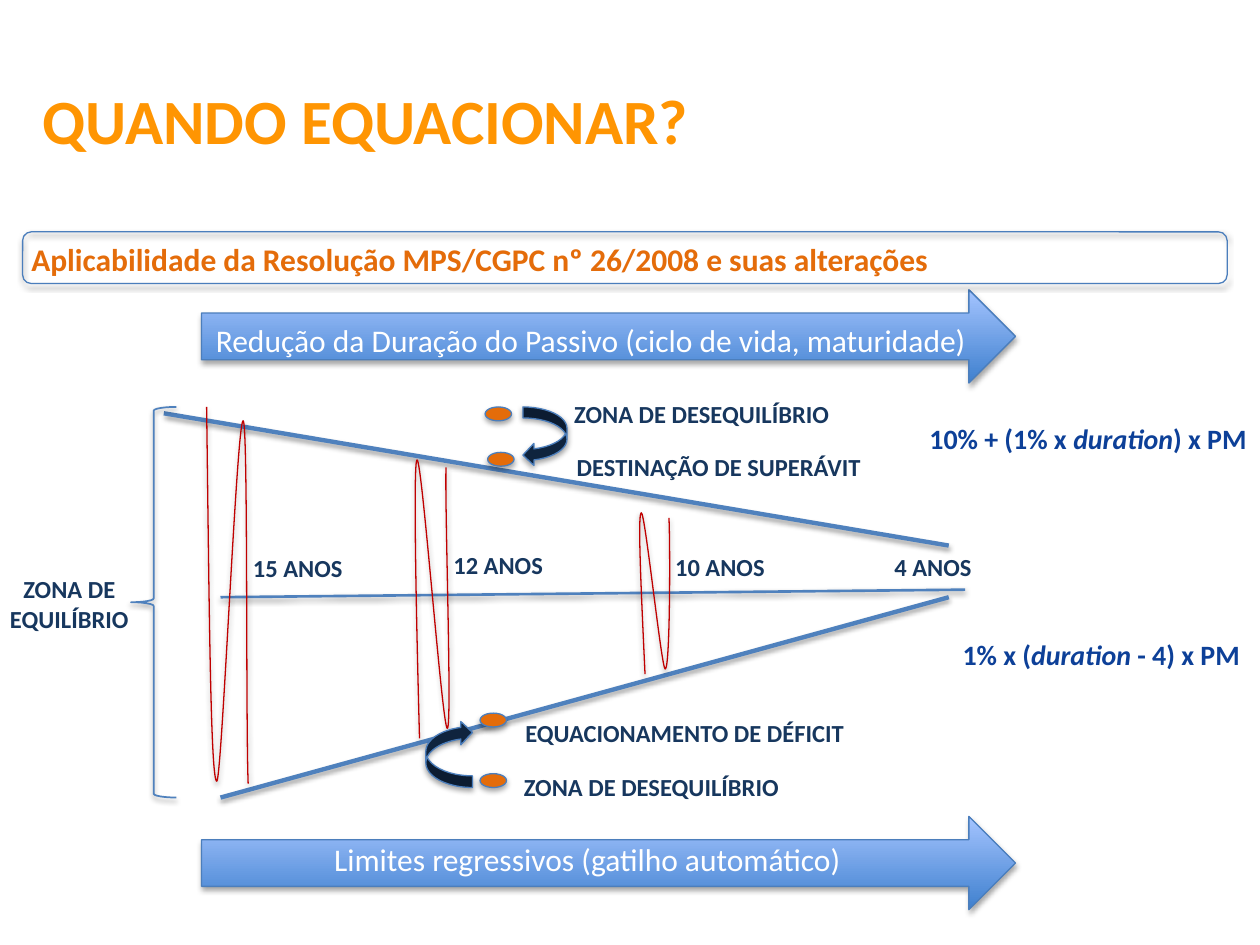
from lxml.etree import SubElement
from pptx import Presentation
from pptx.dml.color import RGBColor
from pptx.enum.shapes import MSO_CONNECTOR, MSO_SHAPE
from pptx.enum.text import MSO_ANCHOR, MSO_AUTO_SIZE, PP_ALIGN
from pptx.oxml.ns import qn
from pptx.util import Inches, Pt

ORANGE, NAVY, BLUE = "E46C0A", "17375E", "0D4098"
OUTLINE, LINE = "4B7EBC", "4F81BD"

presentation = Presentation()
presentation.slide_width, presentation.slide_height = Inches(10), Inches(7.5)
slide = presentation.slides.add_slide(presentation.slide_layouts[6])
shapes = slide.shapes


def add_text(text, left, top, width, height, size=14, color=NAVY, bold=True,
             align=PP_ALIGN.CENTER, anchor=MSO_ANCHOR.TOP,
             auto_size=MSO_AUTO_SIZE.SHAPE_TO_FIT_TEXT):
    """Add a text box; parts between asterisks are italic."""
    box = shapes.add_textbox(Inches(left), Inches(top), Inches(width), Inches(height))
    frame = box.text_frame
    frame.word_wrap = True
    frame.auto_size = auto_size
    frame.vertical_anchor = anchor
    paragraph = frame.paragraphs[0]
    paragraph.alignment = align
    for index, part in enumerate(text.split("*")):
        run = paragraph.add_run()
        run.text = part
        run.font.name = "Calibri"
        run.font.size = Pt(size)
        run.font.bold = bold
        run.font.italic = index % 2 == 1
        run.font.color.rgb = RGBColor.from_string(color)


def style(shape, line=OUTLINE, weight=0.75, fill=None, opacity=35, distance=1.8):
    """Set line, optional fill (a colour or a pair for a gradient) and soft shadow."""
    shape.line.color.rgb = RGBColor.from_string(line)
    shape.line.width = Pt(weight)
    if isinstance(fill, tuple):
        shape.fill.gradient()
        shape.fill.gradient_angle = 90
        for stop, color in zip(shape.fill.gradient_stops, fill):
            stop.color.rgb = RGBColor.from_string(color)
    elif fill:
        shape.fill.solid()
        shape.fill.fore_color.rgb = RGBColor.from_string(fill)
    elif hasattr(shape, "fill"):
        shape.fill.background()
    effects = SubElement(shape.element.spPr, qn("a:effectLst"))
    shadow = SubElement(effects, qn("a:outerShdw"), blurRad=str(Pt(3.1)),
                        dist=str(Pt(distance)), dir="5400000", rotWithShape="0")
    color = SubElement(shadow, qn("a:srgbClr"), val="000000")
    SubElement(color, qn("a:alpha"), val=str(opacity * 1000))


# Title
add_text("QUANDO EQUACIONAR?", 0.24, 0.49, 8.58, 0.91, size=36, color="FF9502",
         align=PP_ALIGN.LEFT, anchor=MSO_ANCHOR.MIDDLE, auto_size=MSO_AUTO_SIZE.NONE)

# Wide arrows above and below the diagram
for text, arrow_top, text_top in [
    ("Redução da Duração do Passivo (ciclo de vida, maturidade)", 2.3, 2.5),
    ("Limites regressivos (gatilho automático) ", 6.48, 6.62),
]:
    arrow = shapes.add_shape(MSO_SHAPE.RIGHT_ARROW, Inches(1.6), Inches(arrow_top),
                             Inches(6.46), Inches(0.74))
    style(arrow, fill=("3F80CE", "A4C4FF"))
    add_text(text, 1.58, text_top, 6.22, 0.4, size=18, color="FFFFFF", bold=False)

# Centre axis and the converging limits
for x1, y1, x2, y2, weight in [
    (1.75, 4.74, 7.66, 4.68, 1.5),
    (1.3, 3.28, 7.53, 4.33, 2.5),
    (1.75, 6.33, 7.53, 4.74, 2.5),
]:
    limit = shapes.add_connector(MSO_CONNECTOR.STRAIGHT, Inches(x1), Inches(y1),
                                 Inches(x2), Inches(y2))
    style(limit, LINE, weight, opacity=38, distance=1.6)

# Red oscillations: a start point, then cubic curves of two controls and an end
oscillations = [
    [(1.64, 3.23), (1.66, 4.71), (1.67, 6.18), (1.72, 6.2), (1.76, 6.22),
     (1.88, 3.33), (1.93, 3.34), (1.97, 3.34), (1.95, 5.74), (1.97, 6.22)],
    [(3.33, 5.86), (3.3, 4.76), (3.28, 3.66), (3.31, 3.65), (3.35, 3.64),
     (3.51, 5.77), (3.55, 5.78), (3.59, 5.79), (3.53, 4.05), (3.54, 3.71)],
    [(5.12, 5.35), (5.09, 4.71), (5.06, 4.08), (5.09, 4.07), (5.12, 4.06),
     (5.25, 5.3), (5.28, 5.31), (5.32, 5.31), (5.32, 4.3), (5.31, 4.11)],
]
for points in oscillations:
    start, *vertices = [(Inches(x), Inches(y)) for x, y in points]
    builder = shapes.build_freeform(*start)
    builder.add_line_segments(vertices, close=False)
    oscillation = builder.convert_to_shape()
    # Turn every three line segments into one cubic curve
    outline = oscillation.element.find(".//" + qn("a:path"))
    segments = outline.findall(qn("a:lnTo"))
    for first in range(0, len(segments), 3):
        curve = SubElement(outline, qn("a:cubicBezTo"))
        for segment in segments[first:first + 3]:
            curve.append(segment[0])
            outline.remove(segment)
    style(oscillation, "C00000")

# Balance zone
brace = shapes.add_shape(MSO_SHAPE.LEFT_BRACE, Inches(1.04), Inches(3.23),
                         Inches(0.36), Inches(3.1))
style(brace, LINE, 1, opacity=38, distance=1.6)
add_text("ZONA DE EQUILÍBRIO", -0.06, 4.51, 1.22, 0.57)

# Markers
for left, top in [(3.81, 6.14), (3.85, 3.23), (3.87, 3.59), (3.81, 5.66)]:
    marker = shapes.add_shape(MSO_SHAPE.OVAL, Inches(left), Inches(top),
                              Inches(0.21), Inches(0.11))
    style(marker, fill=ORANGE)

# Curved arrows between markers
for kind, left, top, width, height, rotation in [
    (MSO_SHAPE.CURVED_LEFT_ARROW, 4.15, 3.23, 0.35, 0.47, 0),
    (MSO_SHAPE.CURVED_DOWN_ARROW, 3.3, 5.8, 0.53, 0.37, 270),
]:
    curved_arrow = shapes.add_shape(kind, Inches(left), Inches(top),
                                    Inches(width), Inches(height))
    curved_arrow.rotation = rotation
    style(curved_arrow, fill="0F243E")

# Zone labels
for text, left, top, width in [
    ("EQUACIONAMENTO DE DÉFICIT", 4.06, 5.65, 2.75),
    ("DESTINAÇÃO DE SUPERÁVIT", 4.41, 3.54, 2.59),
    ("ZONA DE DESEQUILÍBRIO", 4.02, 6.08, 2.3),
    ("ZONA DE DESEQUILÍBRIO", 4.42, 3.12, 2.3),
]:
    add_text(text, left, top, width, 0.34)

# Durations
for years, left, top in [(15, 1.91, 4.34), (4, 7, 4.33), (12, 3.5, 4.32), (10, 5.26, 4.33)]:
    add_text(f"{years} ANOS", left, top, 1.06, 0.34, align=PP_ALIGN.LEFT)

# Limit formulas
add_text("10% + (1% x *duration*) x PM", 7.27, 3.3, 2.73, 0.37, size=16, color=BLUE)
add_text("1% x (*duration* - 4) x PM ", 7.53, 5.01, 2.47, 0.37, size=16, color=BLUE)

# Subtitle in a rounded frame
subtitle_frame = shapes.add_shape(MSO_SHAPE.ROUNDED_RECTANGLE, Inches(0.18), Inches(1.84),
                                  Inches(9.56), Inches(0.41))
style(subtitle_frame)
add_text("Aplicabilidade da Resolução MPS/CGPC nº 26/2008 e suas alterações",
         0.15, 1.86, 9.74, 0.4, size=18, color=ORANGE, align=PP_ALIGN.LEFT)

presentation.save("out.pptx")
